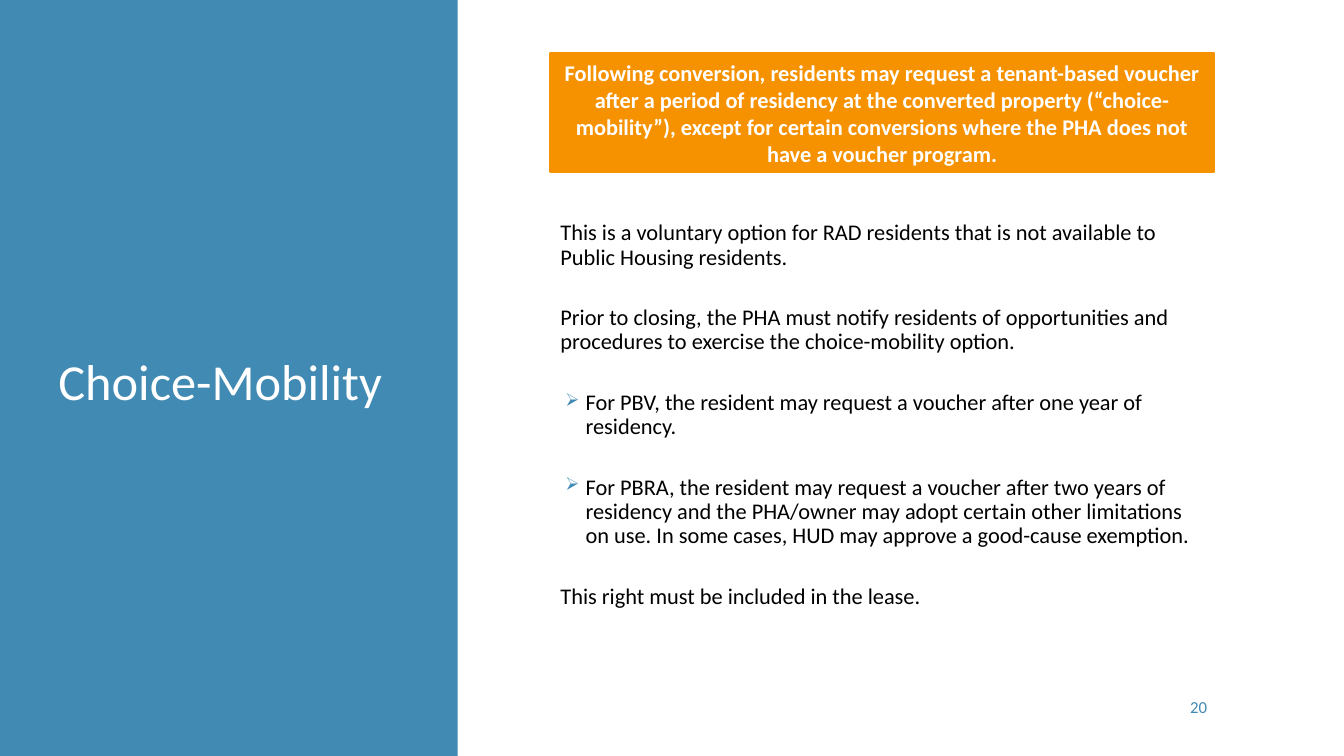
import dataclasses

import lxml.etree
import pptx
import pptx.dml.color
import pptx.enum.shapes
import pptx.enum.text
import pptx.oxml.ns
import pptx.util

Inches = pptx.util.Inches
Pt = pptx.util.Pt
ALIGN = pptx.enum.text.PP_ALIGN
MIDDLE = pptx.enum.text.MSO_ANCHOR.MIDDLE


@dataclasses.dataclass(frozen=True)
class Theme:
    font: str = "Calibri"
    blue: str = "418AB3"
    orange: str = "F69200"
    white: str = "FFFFFF"
    black: str = "000000"
    title_size: int = 36
    body_size: int = 16
    number_size: int = 12


THEME = Theme()

CALLOUT = (
    "Following conversion, residents may request a tenant-based voucher after a period of "
    "residency at the converted property (“choice-mobility”), except for certain conversions "
    "where the PHA does not have a voucher program."
)

# Each entry: text, whether it carries an arrow bullet
BODY = [
    ("This is a voluntary option for RAD residents that is not available to "
     "Public Housing residents.", False),
    ("Prior to closing, the PHA must notify residents of opportunities and procedures "
     "to exercise the choice-mobility option.", False),
    ("For PBV, the resident may request a voucher after one year of residency.", True),
    ("For PBRA, the resident may request a voucher after two years of residency and the "
     "PHA/owner may adopt certain other limitations on use. In some cases, HUD may approve "
     "a good-cause exemption.", True),
    ("This right must be included in the lease.", False),
]


def rgb(color):
    return pptx.dml.color.RGBColor.from_string(color)


def write(paragraph, text, size, color, bold=False, align=ALIGN.LEFT):
    paragraph.text = text
    paragraph.alignment = align
    font = paragraph.runs[0].font
    font.name, font.size, font.bold = THEME.font, Pt(size), bold
    font.color.rgb = rgb(color)


def add_rectangle(slide, box, color):
    shape = slide.shapes.add_shape(
        pptx.enum.shapes.MSO_SHAPE.RECTANGLE, *map(Inches, box))
    shape.shadow.inherit = False
    shape.fill.solid()
    shape.fill.fore_color.rgb = rgb(color)
    shape.line.fill.background()
    return shape


def add_text_frame(slide, box):
    text_frame = slide.shapes.add_textbox(*map(Inches, box)).text_frame
    text_frame.word_wrap = True
    text_frame.vertical_anchor = MIDDLE
    return text_frame


def add_arrow_bullet(paragraph):
    properties = paragraph._p.get_or_add_pPr()
    properties.set("marL", str(Inches(0.25)))
    properties.set("indent", str(Inches(-0.2)))
    qn = pptx.oxml.ns.qn
    bullet_color = lxml.etree.SubElement(properties, qn("a:buClr"))
    lxml.etree.SubElement(bullet_color, qn("a:srgbClr"), val=THEME.blue)
    lxml.etree.SubElement(properties, qn("a:buSzPct"), val="80000")
    lxml.etree.SubElement(properties, qn("a:buChar"), char="➢")


def add_title_panel(slide, box):
    left, top, width, height = box
    add_rectangle(slide, box, THEME.blue)
    title = add_text_frame(slide, (left + 0.48, top + 0.96, width - 0.96, 5.71))
    write(title.paragraphs[0], "Choice-Mobility", THEME.title_size, THEME.white)
    title.paragraphs[0].line_spacing = 0.9


def add_callout(slide, box):
    shape = add_rectangle(slide, box, THEME.orange)
    shape.line.color.rgb = rgb(THEME.orange)
    shape.line.width = Pt(1.5)
    shape.text_frame.word_wrap = True
    shape.text_frame.vertical_anchor = MIDDLE
    write(shape.text_frame.paragraphs[0], CALLOUT, THEME.body_size, THEME.white,
          bold=True, align=ALIGN.CENTER)


def add_body(slide, box):
    text_frame = add_text_frame(slide, box)
    text_frame.margin_bottom = Inches(0.66)
    for index, (text, bulleted) in enumerate(BODY):
        paragraph = text_frame.add_paragraph() if index else text_frame.paragraphs[0]
        write(paragraph, text, THEME.body_size, THEME.black)
        paragraph.line_spacing = 0.9
        paragraph.space_before, paragraph.space_after = Pt(14), Pt(12)
        if bulleted:
            add_arrow_bullet(paragraph)


def add_slide_number(slide, box):
    text_frame = add_text_frame(slide, box)
    write(text_frame.paragraphs[0], "20", THEME.number_size, THEME.blue, align=ALIGN.RIGHT)


def main():
    presentation = pptx.Presentation()
    presentation.slide_width = Inches(13.33)
    presentation.slide_height = Inches(7.5)
    slide = presentation.slides.add_slide(presentation.slide_layouts[6])
    slide.background.fill.solid()
    slide.background.fill.fore_color.rgb = rgb(THEME.white)

    # Left panel with the title
    add_title_panel(slide, (0, 0, 4.54, 7.5))

    # Right column: body, page number, callout
    column_left, column_width = 5.46, 6.58
    add_body(slide, (column_left, 1.57, column_width, 5.71))
    add_slide_number(slide, (10.9, 6.81, 1.17, 0.4))
    add_callout(slide, (column_left, 0.53, column_width, 1.18))

    presentation.save("out.pptx")


if __name__ == "__main__":
    main()
